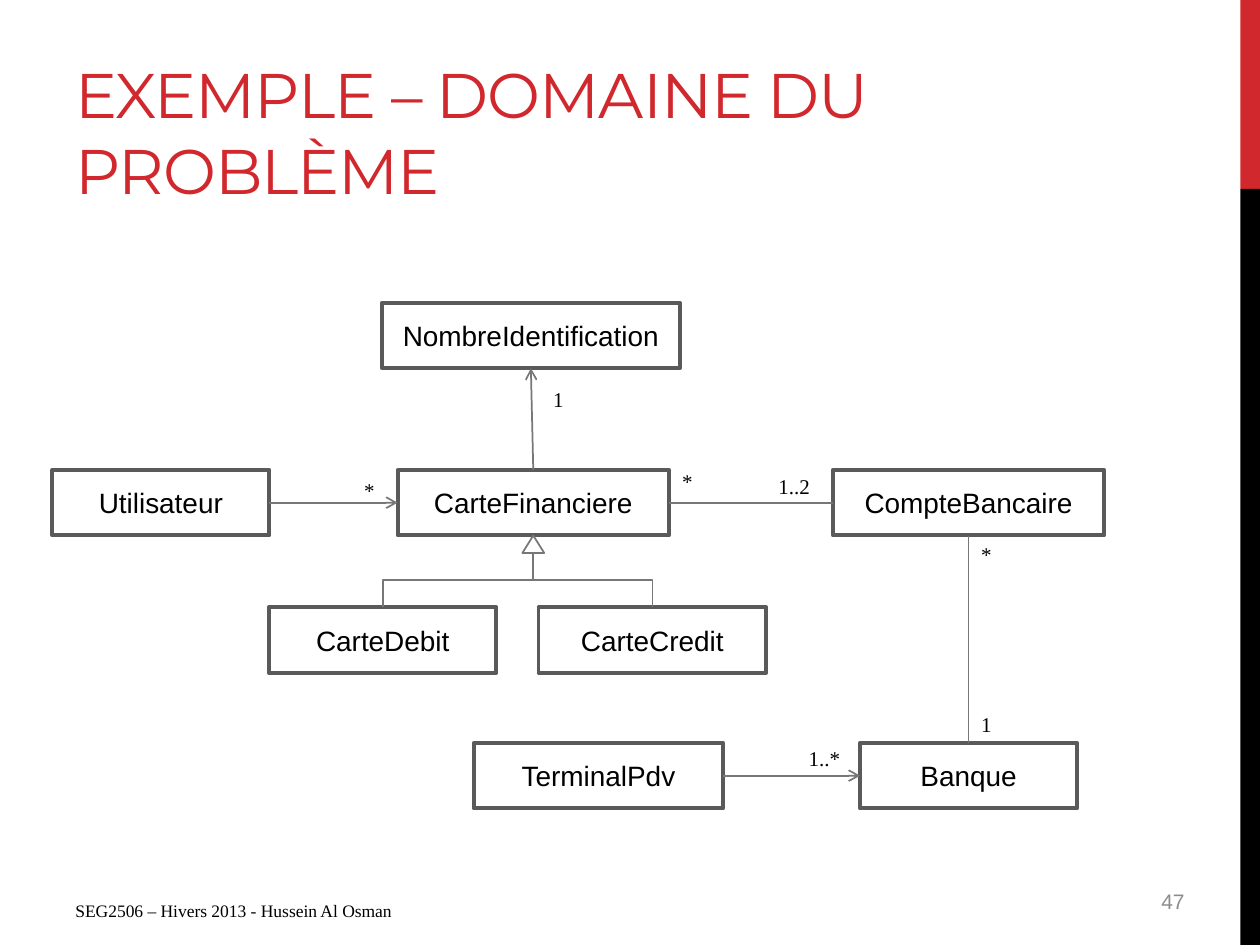
from pptx import Presentation
from pptx.util import Pt
from pptx.dml.color import RGBColor
from pptx.enum import shapes, text
from pptx.oxml import ns, xmlchemy

RED = RGBColor(0xD1, 0x28, 0x2E)
BLACK = RGBColor(0, 0, 0)
DARK = RGBColor(0x5A, 0x5A, 0x5A)
GREY = RGBColor(0x77, 0x77, 0x77)
PALE = RGBColor(0x8C, 0x8C, 0x8C)
SERIF = "Times New Roman"
TOP, LEFT, BASE, RIGHT = range(4)

deck = Presentation()
deck.slide_width, deck.slide_height = Pt(720), Pt(540)
slide = deck.slides.add_slide(deck.slide_layouts[6])
parts = slide.shapes


def write(shape, words, size, face, tint, align, anchor):
    frame = shape.text_frame
    frame.word_wrap = True
    frame.vertical_anchor = anchor
    para = frame.paragraphs[0]
    para.alignment = align
    run = para.add_run()
    run.text = words
    run.font.size = Pt(size)
    run.font.name = face
    run.font.color.rgb = tint
    return run


def dress(line, tail=False):
    line.line.color.rgb = GREY
    line.line.width = Pt(1)
    props = line._element.spPr
    if tail:
        head = xmlchemy.OxmlElement("a:tailEnd")
        head.set("type", "arrow")
        line.line._get_or_add_ln().append(head)
    props.append(xmlchemy.OxmlElement("a:effectLst"))


for top, high, tint in [(0, 108, RED), (108, 432, BLACK)]:
    bar = parts.add_shape(shapes.MSO_SHAPE.RECTANGLE, Pt(708.75), Pt(top), Pt(11.25), Pt(high))
    bar.shadow.inherit = False
    bar.fill.solid()
    bar.fill.fore_color.rgb = tint
    bar.line.fill.background()

title = parts.add_textbox(Pt(36), Pt(12), Pt(546), Pt(108))
title.text_frame.margin_bottom = Pt(1.8)
run = write(title, "EXEMPLE – DOMAINE DU PROBLÈME", 36, "Montserrat", RED,
            text.PP_ALIGN.LEFT, text.MSO_ANCHOR.BOTTOM)
run._r.get_or_add_rPr().set("spc", "-60")

boxes = {}
for name, left, top, wide in [
    ("NombreIdentification", 218.25, 173, 170.25),
    ("CarteFinanciere", 227.25, 268.5, 155),
    ("Banque", 491.5, 424.5, 124),
    ("Utilisateur", 30, 268.5, 124),
    ("CarteDebit", 153.75, 347, 130),
    ("CarteCredit", 307.75, 347, 130),
    ("CompteBancaire", 476, 268.5, 155),
    ("TerminalPdv", 270.75, 424.5, 142.5),
]:
    box = parts.add_shape(shapes.MSO_SHAPE.RECTANGLE, Pt(left), Pt(top), Pt(wide), Pt(37.5))
    box.shadow.inherit = False
    box.fill.background()
    box.line.color.rgb = DARK
    box.line.width = Pt(2.25)
    write(box, name, 16, "Arial", BLACK, text.PP_ALIGN.CENTER, text.MSO_ANCHOR.MIDDLE)
    boxes[name] = box

for start, out, end, into, tail in [
    ("Utilisateur", RIGHT, "CarteFinanciere", LEFT, True),
    ("CarteFinanciere", RIGHT, "CompteBancaire", LEFT, False),
    ("Banque", TOP, "CompteBancaire", BASE, False),
    ("TerminalPdv", RIGHT, "Banque", LEFT, True),
    ("CarteFinanciere", TOP, "NombreIdentification", BASE, True),
]:
    line = parts.add_connector(shapes.MSO_CONNECTOR.STRAIGHT, 0, 0, 0, 0)
    line.begin_connect(boxes[start], out)
    line.end_connect(boxes[end], into)
    dress(line, tail)

peak = parts.add_shape(shapes.MSO_SHAPE.ISOSCELES_TRIANGLE, Pt(298.5), Pt(306), Pt(12.5), Pt(10))
peak.shadow.inherit = False
peak.fill.background()
peak.line.color.rgb = GREY
peak.line.width = Pt(1)

fork, low, drop = 304.75, 316, 31
for name, turn in [("CarteDebit", 90), ("CarteCredit", 270)]:
    child = boxes[name]
    goal = child.left.pt + child.width.pt / 2
    span = abs(goal - fork)
    mid = (goal + fork) / 2
    ends = [mid - drop / 2, mid + drop / 2]
    if turn == 270:
        ends.reverse()
    rise = low + drop / 2 - span / 2
    line = parts.add_connector(shapes.MSO_CONNECTOR.ELBOW, Pt(ends[0]), Pt(rise),
                               Pt(ends[1]), Pt(rise + span))
    line._element.spPr.find(ns.qn("a:xfrm")).set("rot", str(turn * 60000))
    dress(line)

for words, left, top, wide in [
    ("*", 201, 269.5, 28),
    ("1", 309, 217.5, 25),
    ("1..2", 437.75, 267, 35),
    ("*", 553.5, 306, 35),
    ("1", 553.5, 403, 35),
    ("1..*", 455, 422.5, 35),
    ("*", 382.75, 264, 28),
]:
    label = parts.add_textbox(Pt(left), Pt(top), Pt(wide), Pt(21))
    write(label, words, 12, SERIF, BLACK, text.PP_ALIGN.LEFT, text.MSO_ANCHOR.TOP)

foot = parts.add_textbox(Pt(36), Pt(511), Pt(270), Pt(22))
write(foot, "SEG2506 – Hivers 2013 - Hussein Al Osman", 10, SERIF, BLACK,
      text.PP_ALIGN.LEFT, text.MSO_ANCHOR.TOP)
page = parts.add_textbox(Pt(516), Pt(500.5), Pt(168), Pt(29))
write(page, "47", 12, "Arial", PALE, text.PP_ALIGN.RIGHT, text.MSO_ANCHOR.MIDDLE)

deck.save("out.pptx")
